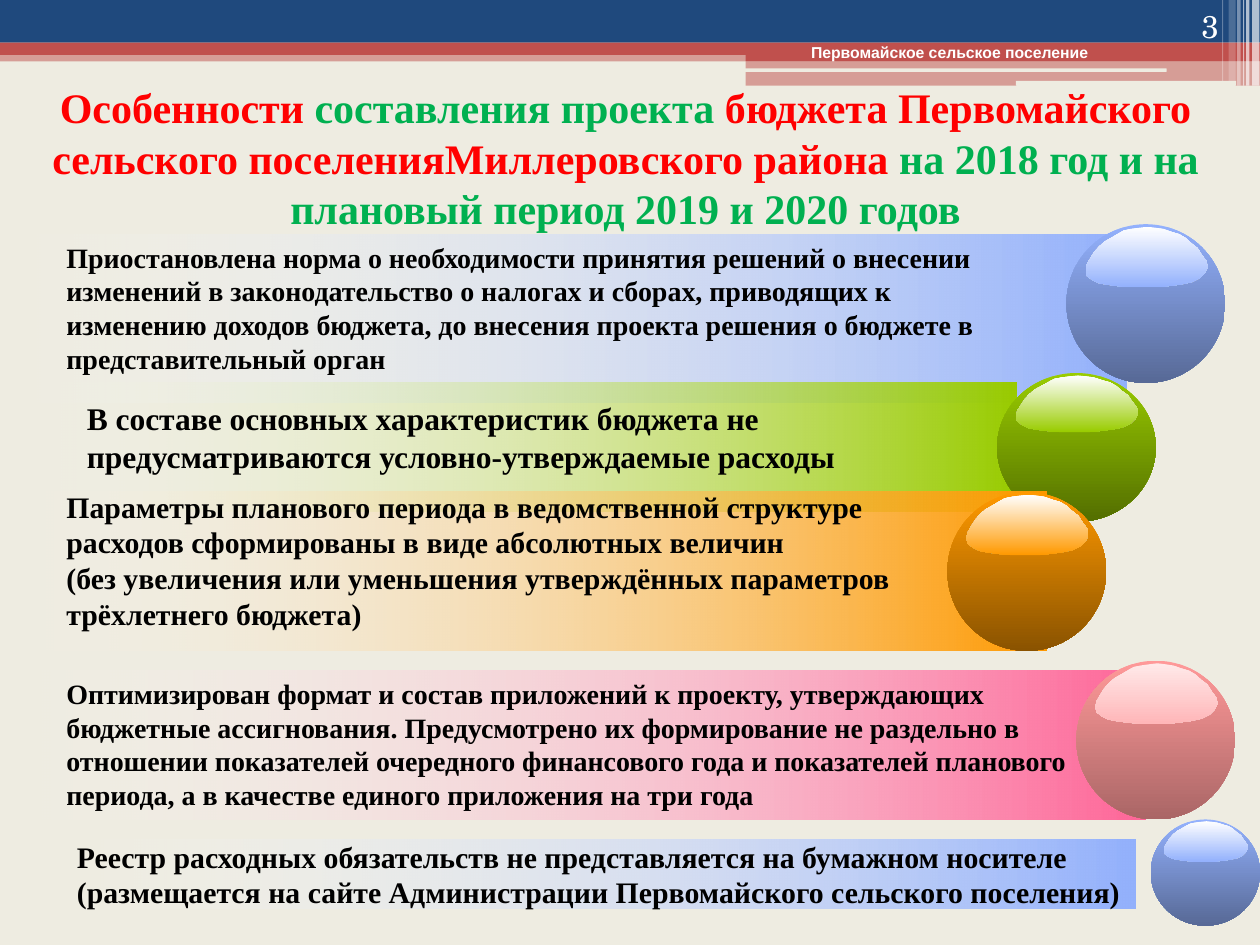
from lxml import etree
from pptx import Presentation
from pptx import util as u
from pptx.dml.color import RGBColor
from pptx.enum import shapes, text
from pptx.oxml.ns import qn

COLORS = {
    "paper": "EEECE1", "navy": "1F497D", "brick": "C0504D", "white": "FFFFFF",
    "black": "000000", "red": "FF0000", "green": "00B050",
    "blue": "93B1FD", "blue_dark": "576996",
    "lime": "99CC00", "lime_dark": "536E00",
    "orange": "FF9900", "orange_dark": "8A5300",
    "pink": "FF6699", "rose": "FF9999", "rose_dark": "AA6666",
    "rose_light": "FFE9E9", "rose_mid": "FFB7B9",
}
SERIF = "Times New Roman"

# Outline of the highlight on a ball, in percent of the ball's size
GLOSS = [
    (88, 23), (89, 27), (87, 31), (84, 34), (79, 36.5), (72, 38), (64, 39),
    (58, 39.7), (40, 39.7), (32.5, 39), (25, 38), (20, 37), (16, 35),
    (12.7, 32.5), (12, 29), (12.7, 25.5), (15, 21.5), (17.5, 17.5),
    (20.6, 14), (24, 11), (28, 8.7), (32, 6.3), (36, 4), (40.5, 3),
    (46, 2.2), (51, 1.6), (56, 2.2), (61, 3), (66, 4.8), (71, 6.3),
    (75, 8.7), (78.6, 12), (82.5, 15), (85, 19),
]


def rgb(name):
    return RGBColor.from_string(COLORS[name])


class Deck:
    """Holds the style and the current slide; all lengths are centimetres."""

    def __init__(self, slide):
        self.slide = slide
        slide.background.fill.solid()
        slide.background.fill.fore_color.rgb = rgb("paper")

    def finish(self, shape):
        shape.line.fill.background()
        shape.shadow.inherit = False
        return shape

    def set_alpha(self, shape, percent):
        first_color = next(shape._element.spPr.iter(qn("a:srgbClr")))
        etree.SubElement(first_color, qn("a:alpha"), val=str(percent * 1000))

    def set_gradient(self, shape, start, end, angle):
        shape.fill.gradient()
        shape.fill.gradient_angle = angle
        for stop, color in zip(shape.fill.gradient_stops, (start, end)):
            stop.color.rgb = rgb(color)

    def shape(self, kind, left, top, width, height):
        return self.finish(self.slide.shapes.add_shape(
            kind, u.Cm(left), u.Cm(top), u.Cm(width), u.Cm(height)))

    def bar(self, left, top, width, height, color, alpha=100,
            kind=shapes.MSO_SHAPE.RECTANGLE):
        bar = self.shape(kind, left, top, width, height)
        bar.fill.solid()
        bar.fill.fore_color.rgb = rgb(color)
        if alpha < 100:
            self.set_alpha(bar, alpha)

    def strip(self, left, top, width, height, color):
        strip = self.shape(shapes.MSO_SHAPE.RECTANGLE, left, top, width, height)
        self.set_gradient(strip, "white", color, 0)
        self.set_alpha(strip, 0)
        return strip

    def ball(self, left, top, width, height, color, dark,
             gloss_top="white", gloss_bottom=None):
        ball = self.shape(shapes.MSO_SHAPE.OVAL, left, top, width, height)
        self.set_gradient(ball, color, dark, 270)
        outline = [(u.Cm(left + width * x / 100), u.Cm(top + height * y / 100))
                   for x, y in GLOSS]
        builder = self.slide.shapes.build_freeform(*outline[0])
        builder.add_line_segments(outline[1:], close=True)
        gloss = self.finish(builder.convert_to_shape())
        self.set_gradient(gloss, gloss_top, gloss_bottom or color, 270)

    def set_text(self, frame, lines, size, color="black", font=SERIF,
                 bold=True, align=text.PP_ALIGN.LEFT):
        frame.text = "\n".join(lines)
        for paragraph in frame.paragraphs:
            paragraph.alignment = align
            paragraph.font.size = u.Pt(size)
            paragraph.font.name = font
            paragraph.font.bold = bold
            paragraph.font.color.rgb = rgb(color)

    def text_box(self, left, top, width, height, lines, size, **style):
        frame = self.slide.shapes.add_textbox(
            u.Cm(left), u.Cm(top), u.Cm(width), u.Cm(height)).text_frame
        frame.word_wrap = True
        self.set_text(frame, lines, size, **style)
        return frame

    def title(self, left, top, width, height, parts, size):
        title = self.slide.shapes.title
        title.left, title.top = u.Cm(left), u.Cm(top)
        title.width, title.height = u.Cm(width), u.Cm(height)
        frame = title.text_frame
        frame.word_wrap = True
        frame.auto_size = text.MSO_AUTO_SIZE.NONE
        frame.vertical_anchor = text.MSO_ANCHOR.TOP
        heading = frame.paragraphs[0]
        heading.alignment = text.PP_ALIGN.CENTER
        heading.font.size, heading.font.name = u.Pt(size), SERIF
        heading.font.bold = True
        for words, color in parts:
            run = heading.add_run()
            run.text = words
            run.font.color.rgb = rgb(color)


def main():
    prs = Presentation()
    prs.slide_width, prs.slide_height = u.Cm(25.4), u.Cm(19.05)
    deck = Deck(prs.slides.add_slide(prs.slide_layouts[5]))

    # Header bands
    deck.bar(0, 1.01, 25.4, 0.23, "brick", 50)
    deck.bar(0, 0, 25.4, 0.86, "navy")
    deck.bar(0, 0.86, 25.4, 0.25, "brick")
    deck.bar(15.03, 0.99, 10.37, 0.24, "brick")
    deck.bar(15.03, 1.23, 10.37, 0.5, "brick", 50)
    for left, top, width, height in [(15.01, 1.38, 8.51, 0.07),
                                     (20.48, 1.63, 4.44, 0.1)]:
        deck.bar(left, top, width, height, "paper",
                 kind=shapes.MSO_SHAPE.ROUNDED_RECTANGLE)

    # Pale vertical stripes in the corner
    for left, width, height, alpha in [
            (25.24, 0.15, 1.73, 65), (25.12, 0.07, 1.73, 65),
            (25.06, 0.02, 1.73, 60), (24.94, 0.07, 1.73, 40),
            (24.77, 0.14, 1.63, 20), (24.64, 0.02, 1.63, 30)]:
        deck.bar(left, 0, width, height, "white", alpha)

    # Title, settlement name and page number
    deck.title(0.71, 1.52, 23.8, 3.33, [
        ("Особенности", "red"),
        (" составления проекта ", "green"),
        ("бюджета Первомайского сельского поселенияМиллеровского района ", "red"),
        ("на 2018 год и на плановый период 2019 и 2020 годов", "green")], 24)
    deck.text_box(16.1, 0.74, 8.2, 0.64, ["Первомайское сельское поселение"], 9,
                  color="white", font="Arial")
    number = deck.text_box(22.71, 0, 2.11, 1.02, ["3"], 18, color="white",
                           font="TeX Gyre Schola", bold=False,
                           align=text.PP_ALIGN.RIGHT)
    number.vertical_anchor = text.MSO_ANCHOR.BOTTOM

    # Tax law norm
    deck.strip(0, 4.72, 22.71, 3.4, "blue")
    deck.ball(21.5, 4.52, 3.2, 3.2, "blue", "blue_dark")
    deck.text_box(1.09, 4.72, 19.4, 3, [
        "Приостановлена норма о необходимости принятия решений о внесении "
        "изменений в законодательство о налогах и сборах, приводящих к "
        "изменению доходов бюджета, до внесения проекта решения о бюджете в "
        "представительный орган"], 16)

    # Conditionally approved expenses
    deck.strip(0, 7.72, 20.5, 2.6, "lime")
    deck.ball(20.1, 7.52, 3.2, 3, "lime", "lime_dark")
    deck.text_box(1.5, 7.92, 18, 1.8, [
        "В составе основных характеристик бюджета не предусматриваются "
        "условно-утверждаемые расходы"], 18)

    # Planning period parameters
    deck.strip(-0.3, 9.92, 21.4, 3.2, "orange")
    deck.ball(19.1, 9.92, 3.2, 3.2, "orange", "orange_dark")
    deck.text_box(1.09, 9.72, 19.6, 3.84, [
        "Параметры планового периода в ведомственной структуре",
        "расходов сформированы в виде абсолютных величин \v(без увеличения "
        "или уменьшения утверждённых параметров трёхлетнего бюджета)"], 17)

    # Format of the appendices
    deck.strip(0, 13.52, 23.1, 3, "pink")
    deck.ball(21.7, 13.32, 3.2, 3.2, "rose", "rose_dark",
              "rose_light", "rose_mid")
    deck.text_box(1.09, 13.52, 20.8, 3, [
        "Оптимизирован формат и состав приложений к проекту, утверждающих "
        "бюджетные ассигнования. Предусмотрено их формирование не раздельно в "
        "отношении показателей очередного финансового года и показателей "
        "планового периода, а в качестве единого приложения на три года"], 16)

    # Register of expenditure obligations
    register = deck.strip(1.3, 16.92, 21.6, 1.4, "blue").text_frame
    register.word_wrap = False
    register.vertical_anchor = text.MSO_ANCHOR.MIDDLE
    deck.set_text(register, [
        "Реестр расходных обязательств не представляется на бумажном носителе",
        "(размещается на сайте Администрации Первомайского сельского поселения)",
    ], 17)
    deck.ball(23.2, 16.52, 2.2, 2.14, "blue", "blue_dark")

    prs.save("out.pptx")


if __name__ == "__main__":
    main()
